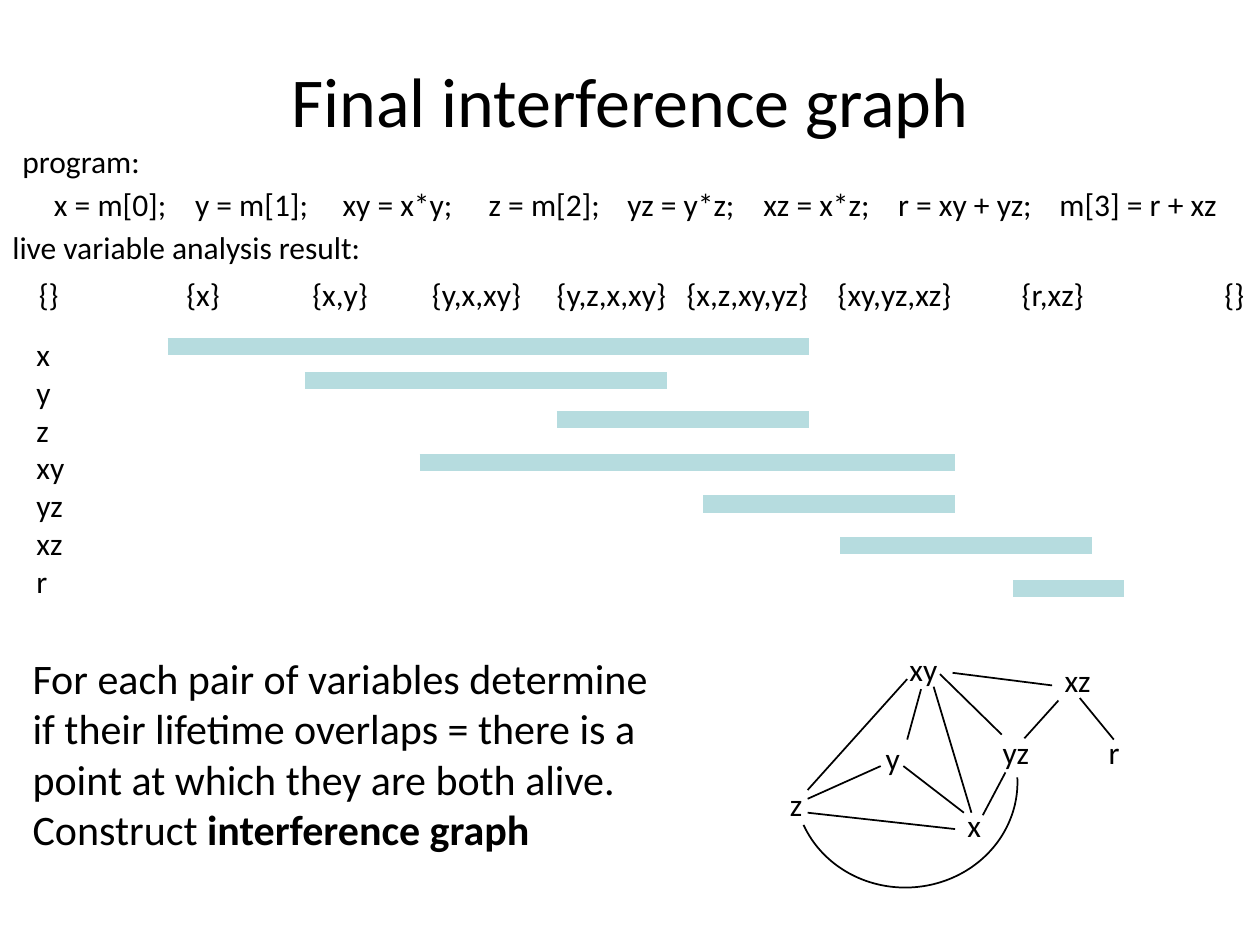
from lxml import etree
from pptx import Presentation
from pptx.dml.color import RGBColor
from pptx.enum.shapes import MSO_CONNECTOR, MSO_SHAPE
from pptx.enum.text import MSO_ANCHOR, PP_ALIGN
from pptx.oxml.ns import qn
from pptx.util import Inches, Pt

STRAIGHT = MSO_CONNECTOR.STRAIGHT
ARC = MSO_SHAPE.ARC
MIDDLE = MSO_ANCHOR.MIDDLE
CENTER = PP_ALIGN.CENTER

BLACK = "000000"
LIFETIME_COLOR = "B6DCDF"

STATEMENTS = ["x = m[0];", "y = m[1];", "xy = x*y;", "z = m[2];",
              "yz = y*z;", "xz = x*z;", "r = xy + yz;", "m[3] = r + xz"]
STATEMENT_TABS = [1.12, 2.29, 3.45, 4.55, 5.63, 6.7, 7.98]

LIVE_SETS = ["{}", "{x}", "{x,y}", "{y,x,xy}", "{y,z,x,xy}",
             "{x,z,xy,yz}", "{xy,yz,xz}", "{r,xz}", "{}"]
LIVE_SET_TABS = [1.17, 2.17, 3.12, 4.11, 5.14, 6.34, 7.8, 9.41]

LIFETIMES = {
    "x": (1.33, 6.42, 2.75),
    "y": (2.42, 5.29, 3.02),
    "z": (4.42, 6.42, 3.33),
    "xy": (3.33, 7.58, 3.67),
    "yz": (5.58, 7.58, 4),
    "xz": (6.67, 8.67, 4.33),
    "r": (8.04, 8.92, 4.67),
}

NODES = {
    "y": (6.93, 5.82, 0.38),
    "yz": (7.86, 5.77, 0.49),
    "x": (7.58, 6.35, 0.37),
    "z": (6.17, 6.18, 0.36),
    "xz": (8.35, 5.2, 0.49),
    "xy": (7.12, 5.11, 0.5),
    "r": (8.7, 5.77, 0.34),
}

EDGES = [
    (7.41, 5.45, 7.71, 6.45),
    (7.58, 6.58, 6.41, 6.45),
    (7.17, 6.08, 7.65, 6.45),
    (7.31, 5.47, 7.2, 5.87),
    (6.41, 6.34, 6.99, 6.08),
    (7.2, 5.39, 6.41, 6.27),
    (7.46, 5.35, 7.95, 5.83),
    (7.98, 6.13, 7.8, 6.47),
    (7.56, 5.34, 8.35, 5.44),
    (8.4, 5.56, 8.13, 5.86),
    (8.57, 5.54, 8.84, 5.87),
]


def color(hex_value):
    return RGBColor.from_string(hex_value)


class SlideBuilder:
    """Draws text, lines and arcs in one style on the current slide."""

    def __init__(self, slide, font="Calibri", size=18):
        self.slide = slide
        self.font = font
        self.size = size

    def text(self, content, left, top, width, height, size=None, wrap=True):
        box = self.slide.shapes.add_textbox(
            Inches(left), Inches(top), Inches(width), Inches(height))
        frame = box.text_frame
        frame.word_wrap = wrap
        frame.text = content
        for paragraph in frame.paragraphs:
            for run in paragraph.runs:
                self.style(run, size)
        return frame

    def style(self, run, size=None):
        run.font.name = self.font
        run.font.size = Pt(size or self.size)
        run.font.color.rgb = color(BLACK)

    def title(self, content, left, top, width, height):
        frame = self.text(content, left, top, width, height, 40)
        frame.vertical_anchor = MIDDLE
        frame.paragraphs[0].alignment = CENTER

    def tabbed_row(self, entries, tabs, left, top, width):
        frame = self.text("\t".join(entries), left, top, width, 0.4)
        properties = frame.paragraphs[0]._p.get_or_add_pPr()
        tab_list = etree.SubElement(properties, qn("a:tabLst"))
        for position in tabs:
            etree.SubElement(tab_list, qn("a:tab"),
                             pos=str(Inches(position)), algn="l")

    def line(self, start_x, start_y, end_x, end_y, hex_value=BLACK, width=1):
        connector = self.slide.shapes.add_connector(
            STRAIGHT, Inches(start_x), Inches(start_y),
            Inches(end_x), Inches(end_y))
        connector.line.color.rgb = color(hex_value)
        connector.line.width = Pt(width)
        etree.SubElement(connector._element.spPr, qn("a:effectLst"))

    def arc(self, left, top, width, height, rotation, start, end):
        shape = self.slide.shapes.add_shape(
            ARC, Inches(left), Inches(top), Inches(width), Inches(height))
        shape.rotation = rotation
        shape.adjustments[0] = start
        shape.adjustments[1] = end
        shape.shadow.inherit = False
        shape.fill.background()
        shape.line.color.rgb = color(BLACK)
        shape.line.width = Pt(1)


def main():
    presentation = Presentation()
    presentation.slide_width = Inches(10)
    presentation.slide_height = Inches(7.5)
    slide = presentation.slides.add_slide(presentation.slide_layouts[6])
    builder = SlideBuilder(slide)

    builder.title("Final interference graph", 0.5, 0.3, 9, 0.98)
    builder.tabbed_row(STATEMENTS, STATEMENT_TABS, 0.33, 1.42, 9.58)
    builder.text("\n".join(LIFETIMES), 0.19, 2.61, 0.42, 2.22, wrap=False)
    builder.tabbed_row(LIVE_SETS, LIVE_SET_TABS, 0.21, 2.13, 9.79)
    builder.text("live variable analysis result:", 0, 1.76, 3, 0.4)
    builder.text("program:", 0.08, 1.08, 3, 0.4)

    for start, end, y in LIFETIMES.values():
        builder.line(start, y, end, y, LIFETIME_COLOR, 10)

    explanation = builder.text(
        "For each pair of variables determine\n"
        "if their lifetime overlaps = there is a \v"
        "point at which they are both alive.\n"
        "Construct ", 0.16, 5.13, 5.28, 1.72, 24)
    term = explanation.paragraphs[-1].add_run()
    term.text = "interference graph"
    builder.style(term, 24)
    term.font.bold = True

    for name, (left, top, width) in NODES.items():
        builder.text(name, left, top, width, 0.47, wrap=False)
    for edge in EDGES:
        builder.line(*edge)
    builder.arc(6.36, 5.33, 1.66, 1.77, 87.1, 162, 42.39)

    presentation.save("out.pptx")


if __name__ == "__main__":
    main()
